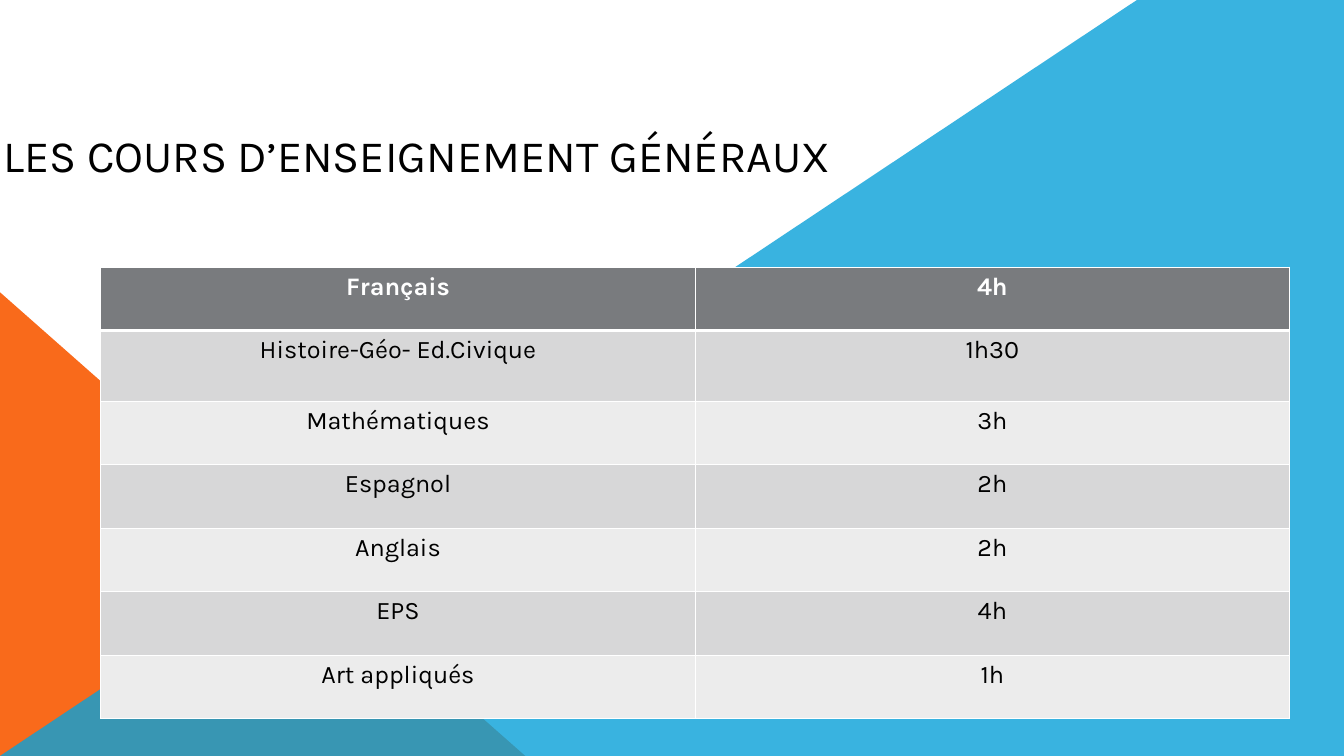
from lxml import etree
from pptx import Presentation
from pptx.dml.color import RGBColor
from pptx.enum.shapes import MSO_SHAPE
from pptx.enum.text import MSO_ANCHOR, PP_ALIGN
from pptx.oxml.ns import qn
from pptx.util import Inches, Pt

TRIANGLE = MSO_SHAPE.RIGHT_TRIANGLE
BOTTOM = MSO_ANCHOR.BOTTOM
CENTER = PP_ALIGN.CENTER

WHITE = RGBColor(0xFF, 0xFF, 0xFF)
BLACK = RGBColor(0x00, 0x00, 0x00)
ORANGE = RGBColor(0xF9, 0x6A, 0x1B)
BLUE = RGBColor(0x08, 0xA1, 0xD9)
HEADER_GREY = RGBColor(0x79, 0x7B, 0x7E)
BAND_GREYS = (RGBColor(0xD7, 0xD7, 0xD8), RGBColor(0xEC, 0xEC, 0xEC))

FONT = "Karla"
PAGE_WIDTH, PAGE_HEIGHT = Inches(13.33), Inches(7.5)
BLUE_OPACITY = 80
BLUE_TOP_SHARE = 0.846

TITLE = "LES COURS D’ENSEIGNEMENT GÉNÉRAUX"
COURSES = [
    ("Français", "4h"),
    ("Histoire-Géo- Ed.Civique", "1h30"),
    ("Mathématiques", "3h"),
    ("Espagnol", "2h"),
    ("Anglais", "2h"),
    ("EPS", "4h"),
    ("Art appliqués", "1h"),
]
ROW_HEIGHT, TALL_ROW_HEIGHT = Inches(0.63), Inches(0.7)
TALL_ROW = 1


def inches(*lengths):
    return tuple(Inches(length) for length in lengths)


def set_format(target, values):
    for name, value in values.items():
        setattr(target, name, value)


def write(frame, text, size, color, bold=False):
    """Put one centred line of text in a frame."""
    para = frame.paragraphs[0]
    para.alignment = CENTER
    span = para.add_run()
    span.text = text
    set_format(span.font, {"name": FONT, "size": Pt(size), "bold": bold})
    span.font.color.rgb = color


def paint(shape, color):
    shape.shadow.inherit = False
    shape.fill.solid()
    shape.fill.fore_color.rgb = color
    shape.line.fill.background()


def add_background(page, width, height):
    """Orange corner triangle under a translucent blue diagonal."""
    triangle_box = inches(0, 2.9, 5.21, 4.6)
    paint(page.shapes.add_shape(TRIANGLE, *triangle_box), ORANGE)

    outline = page.shapes.build_freeform(0, height)
    corners = [(int(width * BLUE_TOP_SHARE), 0), (width, 0), (width, height)]
    outline.add_line_segments(corners, close=True)
    diagonal = outline.convert_to_shape()
    paint(diagonal, BLUE)
    color = diagonal.fill._xPr.find(qn("a:solidFill"))[0]
    etree.SubElement(color, qn("a:alpha"), val=str(BLUE_OPACITY * 1000))


def add_title(page, box):
    frame = page.shapes.add_textbox(*box).text_frame
    set_format(frame, {
        "word_wrap": True,
        "vertical_anchor": BOTTOM,
        "margin_bottom": Inches(0.01),
    })
    write(frame, TITLE, 32, BLACK)


def add_borders(cell, widths):
    """Draw white edges; widths maps an edge letter to points."""
    properties = cell._tc.get_or_add_tcPr()
    for edge, width in widths.items():
        line = etree.SubElement(properties, qn(f"a:ln{edge}"), w=str(Pt(width)))
        fill = etree.SubElement(line, qn("a:solidFill"))
        etree.SubElement(fill, qn("a:srgbClr"), val=str(WHITE))


def add_timetable(page, box):
    table = page.shapes.add_table(len(COURSES), len(COURSES[0]), *box).table
    for row_index, course in enumerate(COURSES):
        is_header = row_index == 0
        is_tall = row_index == TALL_ROW
        table.rows[row_index].height = TALL_ROW_HEIGHT if is_tall else ROW_HEIGHT
        fill = HEADER_GREY if is_header else BAND_GREYS[(row_index - 1) % 2]
        widths = {
            "L": 1,
            "R": 1,
            "T": 3 if row_index == 1 else 1,
            "B": 3 if is_header else 1,
        }
        for column_index, text in enumerate(course):
            cell = table.cell(row_index, column_index)
            add_borders(cell, widths)
            cell.fill.solid()
            cell.fill.fore_color.rgb = fill
            write(cell.text_frame, text, 18, WHITE if is_header else BLACK, is_header)


def main():
    deck = Presentation()
    set_format(deck, {"slide_width": PAGE_WIDTH, "slide_height": PAGE_HEIGHT})
    page = deck.slides.add_slide(deck.slide_layouts[6])
    add_background(page, PAGE_WIDTH, PAGE_HEIGHT)
    add_title(page, inches(-1.01, 0.17, 10.3, 1.64))
    add_timetable(page, inches(1, 2.65, 11.79, 4.51))
    deck.save("out.pptx")


if __name__ == "__main__":
    main()
